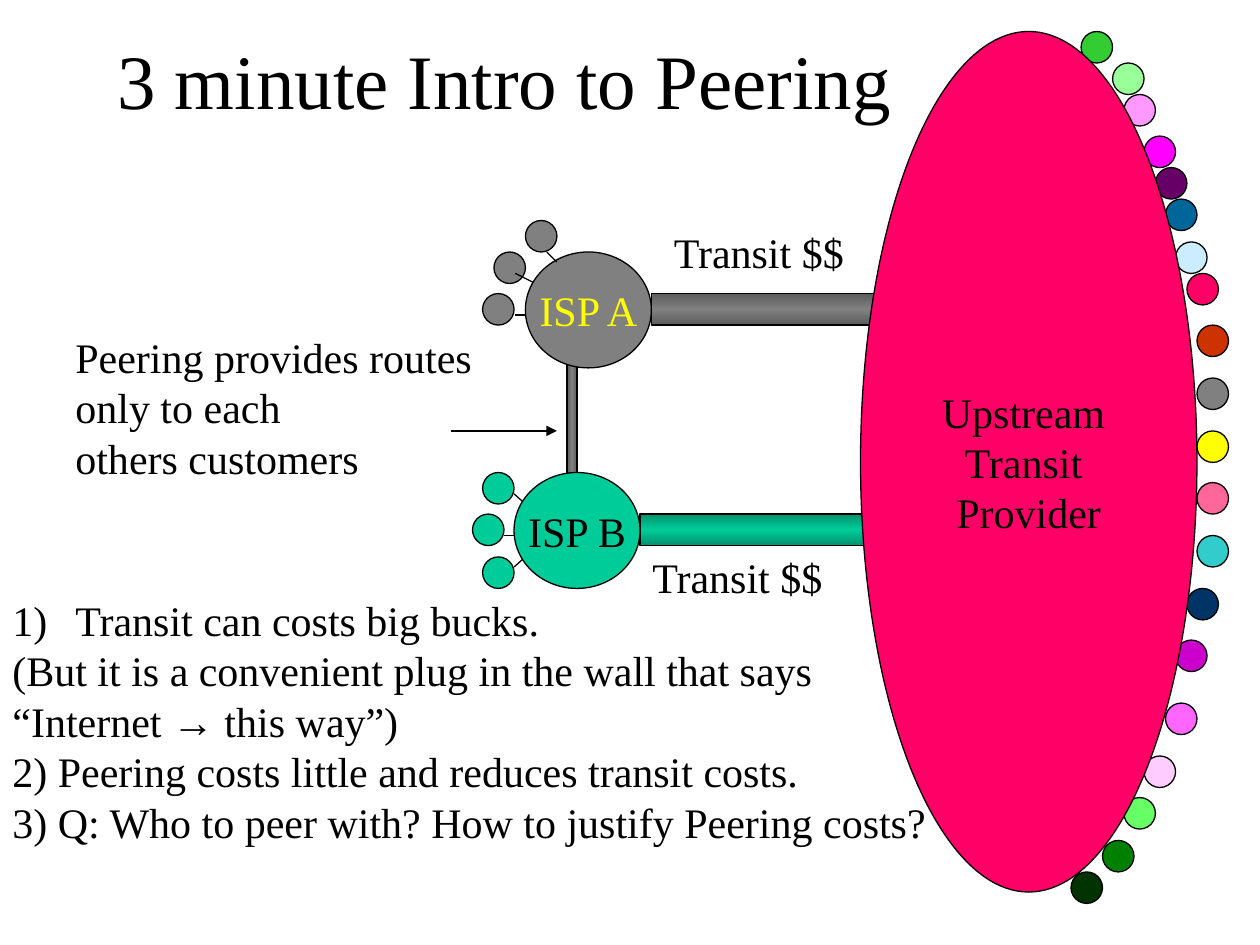
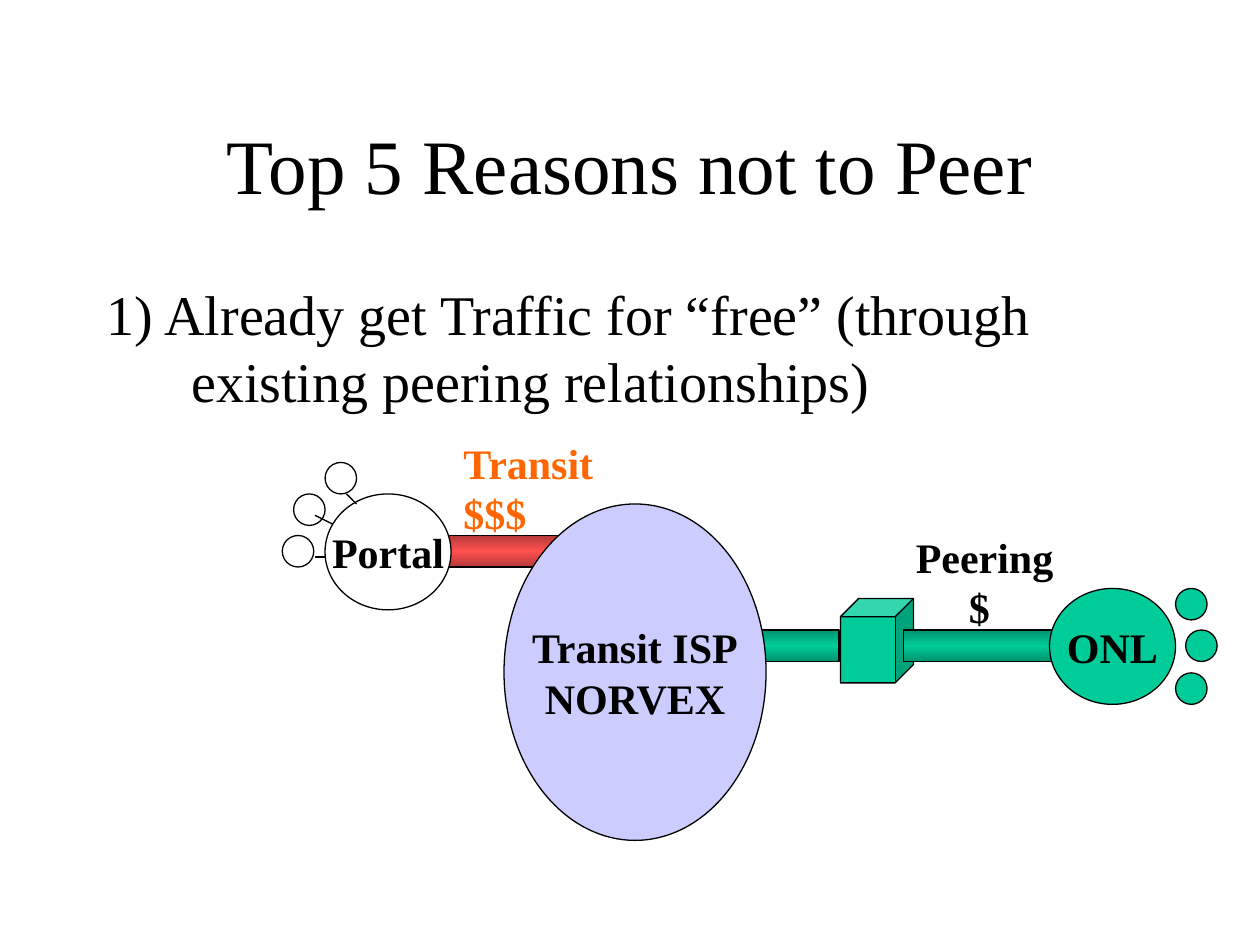
from dataclasses import dataclass

from lxml import etree
from pptx import Presentation
from pptx.dml.color import RGBColor
from pptx.enum.shapes import MSO_CONNECTOR as CONN, MSO_SHAPE as SHAPE
from pptx.enum.text import MSO_ANCHOR as ANCHOR, MSO_AUTO_SIZE as AUTO, PP_ALIGN as ALIGN
from pptx.oxml import parse_xml
from pptx.oxml.ns import nsdecls, qn
from pptx.util import Inches, Pt

FONT = "Times New Roman"
BLACK, WHITE, GRAY, GREEN = "000000", "FFFFFF", "808080", "00CC99"
PINK, YELLOW, ORANGE, LAVENDER = "FF0066", "FFFF00", "FF6600", "CCCCFF"
# Pipe gradients: edge colour, middle colour
GRAY_PIPE, GREEN_PIPE, RED_PIPE = ("5C5C5C", GRAY), ("00926D", GREEN), ("B63939", "FF5050")
DOT = 0.25
NODE_W, NODE_H = 1, 0.92


@dataclass(frozen=True)
class Style:
    size: int = 24
    color: str = BLACK
    bold: bool = False
    align: ALIGN = ALIGN.LEFT


@dataclass(frozen=True)
class Para:
    text: str
    left: float = 0
    first: float = 0
    numbered: bool = False
    before: int = 0


@dataclass(frozen=True)
class Fan:
    """Customer dots and links, as offsets from the node's corner."""
    dots: tuple
    links: tuple = ()
    front_links: tuple = ()


@dataclass(frozen=True)
class Node:
    name: str
    x: float
    y: float
    fill: str
    fan: Fan
    style: Style


FAN_ABOVE = Fan(
    dots=((0, -0.25), (-0.25, 0), (-0.34, 0.33)),
    links=((-0.08, 0.17, 0.08, 0.25), (-0.08, 0.5, 0.08, 0.5)),
    front_links=((0.17, 0, 0.25, 0.08),),
)
FAN_LEFT = Fan(
    dots=((-0.25, 0), (-0.33, 0.33), (-0.25, 0.67)),
    links=((0, 0.17, 0.09, 0.25), (-0.08, 0.5, 0, 0.5), (0, 0.75, 0.09, 0.67)),
)
FAN_RIGHT = Fan(dots=tuple((NODE_W - DOT - dx, dy) for dx, dy in FAN_LEFT.dots))

TITLE = Style(44, align=ALIGN.CENTER)
BODY = Style(32)
LABEL = Style()
CENTER = Style(align=ALIGN.CENTER)
BOLD = Style(bold=True)
BOLD_CENTER = Style(bold=True, align=ALIGN.CENTER)

# Customers around the upstream provider: x, y, colour
UPSTREAM_DOTS = (
    (8.5, 6.92, "003300"), (8.58, 0.25, "33CC33"), (8.83, 0.5, "99FF99"),
    (8.92, 0.75, "FF99FF"), (9.08, 1.08, "FF00FF"), (9.17, 1.33, "660066"),
    (9.25, 1.58, "006699"), (9.33, 1.92, "CCECFF"), (9.42, 2.17, PINK),
    (9.5, 2.58, "CC3300"), (9.5, 3, GRAY), (9.5, 3.42, YELLOW),
    (9.5, 3.83, "FF6699"), (9.5, 4.25, "33CCCC"), (9.42, 4.67, "003366"),
    (9.33, 5.08, "CC00CC"), (9.25, 5.58, "FF66FF"), (9.08, 6, "FFCCFF"),
    (8.92, 6.33, "66FF66"), (8.75, 6.67, "008000"),
)


def rgb(value: str) -> RGBColor:
    return RGBColor.from_string(value)


def write(tf, paras, style: Style) -> None:
    """Fill a text frame; plain strings become unindented paragraphs."""
    for i, para in enumerate(paras):
        if isinstance(para, str):
            para = Para(para)
        p = tf.paragraphs[0] if i == 0 else tf.add_paragraph()
        p.alignment = style.align
        if para.before:
            p.space_before = Pt(para.before)
        pPr = p._p.get_or_add_pPr()
        pPr.set("marL", str(Inches(para.left)))
        pPr.set("indent", str(Inches(para.first)))
        if para.numbered:
            etree.SubElement(pPr, qn("a:buAutoNum")).set("type", "arabicParenR")
        r = p.add_run()
        r.text = para.text
        r.font.name, r.font.size, r.font.bold = FONT, Pt(style.size), style.bold
        r.font.color.rgb = rgb(style.color)


def add_text(s, x: float, y: float, w: float, h: float, paras, style: Style = LABEL,
             wrap: bool = False, anchor: ANCHOR = ANCHOR.TOP) -> None:
    tf = s.shapes.add_textbox(Inches(x), Inches(y), Inches(w), Inches(h)).text_frame
    tf.word_wrap = wrap
    tf.auto_size = AUTO.NONE if wrap else AUTO.SHAPE_TO_FIT_TEXT
    tf.vertical_anchor = anchor
    write(tf, paras, style)


def add_title(s, x: float, y: float, w: float, text: str) -> None:
    add_text(s, x, y, w, 1.25, [text], TITLE, wrap=True, anchor=ANCHOR.MIDDLE)


def add_figure(s, kind: SHAPE, x: float, y: float, w: float, h: float, fill: str,
               paras=(), style: Style = CENTER):
    sp = s.shapes.add_shape(kind, Inches(x), Inches(y), Inches(w), Inches(h))
    sp.shadow.inherit = False
    sp.fill.solid()
    sp.fill.fore_color.rgb = rgb(fill)
    sp.line.color.rgb = rgb(BLACK)
    sp.line.width = Pt(0.75)
    if paras:
        sp.text_frame.word_wrap = False
        sp.text_frame.vertical_anchor = ANCHOR.MIDDLE
        write(sp.text_frame, paras, style)
    return sp


def add_dot(s, x: float, y: float, fill: str) -> None:
    add_figure(s, SHAPE.OVAL, x, y, DOT, DOT, fill)


def add_pipe(s, x: float, y: float, w: float, h: float, colors) -> None:
    """Rectangle shaded across its short side, lightest in the middle."""
    edge, middle = colors
    sp = add_figure(s, SHAPE.RECTANGLE, x, y, w, h, middle)
    stops = "".join(
        f'<a:gs pos="{pos}"><a:srgbClr val="{color}"/></a:gs>'
        for pos, color in ((0, edge), (50000, middle), (100000, edge)))
    angle = 5400000 if w > h else 0
    grad = parse_xml(f'<a:gradFill {nsdecls("a")} rotWithShape="1"><a:gsLst>{stops}</a:gsLst>'
                     f'<a:lin ang="{angle}" scaled="1"/></a:gradFill>')
    spPr = sp._element.spPr
    spPr.replace(spPr.find(qn("a:solidFill")), grad)


def add_line(s, x1: float, y1: float, x2: float, y2: float, arrow: bool = False) -> None:
    cn = s.shapes.add_connector(CONN.STRAIGHT, Inches(x1), Inches(y1), Inches(x2), Inches(y2))
    cn.line.color.rgb = rgb(BLACK)
    cn.line.width = Pt(0.75)
    if arrow:
        etree.SubElement(cn.line._get_or_add_ln(), qn("a:tailEnd")).set("type", "triangle")
    etree.SubElement(cn._element.spPr, qn("a:effectLst"))


def add_node(s, node: Node) -> None:
    """A provider circle with its fan of customers."""
    def draw_links(links) -> None:
        for x1, y1, x2, y2 in links:
            add_line(s, node.x + x1, node.y + y1, node.x + x2, node.y + y2)

    for dx, dy in node.fan.dots:
        add_dot(s, node.x + dx, node.y + dy, node.fill)
    draw_links(node.fan.links)
    add_figure(s, SHAPE.OVAL, node.x, node.y, NODE_W, NODE_H, node.fill, [node.name], node.style)
    draw_links(node.fan.front_links)


def build_intro(s) -> None:
    add_title(s, 0.17, 0, 7.67, "3 minute Intro to Peering")

    # Peering and transit pipes
    add_pipe(s, 4.5, 2.83, 0.08, 1.08, GRAY_PIPE)
    add_pipe(s, 5.17, 2.33, 2.67, 0.25, GRAY_PIPE)
    add_pipe(s, 5.08, 4.08, 2.67, 0.25, GREEN_PIPE)
    add_line(s, 3.58, 3.42, 4.42, 3.42, arrow=True)
    for x, y in ((5.25, 1.75), (5.08, 4.33)):
        add_text(s, x, y, 1.56, 0.5, ["Transit $$"])

    # Providers
    add_node(s, Node("ISP A", 4.17, 2, GRAY, FAN_ABOVE, Style(color=YELLOW, align=ALIGN.CENTER)))
    add_node(s, Node("ISP B", 4.08, 3.75, GREEN, FAN_LEFT, CENTER))
    add_text(s, 0.5, 2.58, 3.43, 1.3,
             ["Peering provides routes", "only to each", "others customers"])
    for dot in UPSTREAM_DOTS:
        add_dot(s, *dot)

    # Conclusions
    lines = ("Transit can costs big bucks.",
             "(But it is a convenient plug in the wall that says",
             "“Internet → this way”)",
             "2) Peering costs little and reduces transit costs.",
             "3) Q: Who to peer with? How to justify Peering costs?")
    add_text(s, 0, 4.67, 7.45, 2.1,
             [Para(text, 0.5, -0.5, numbered=i == 0) for i, text in enumerate(lines)])
    add_figure(s, SHAPE.OVAL, 6.83, 0.25, 2.67, 6.83, PINK,
               ["Upstream ", "Transit ", "Provider"])


def build_reasons(s) -> None:
    # Peering path
    add_pipe(s, 5.33, 5, 1.33, 0.25, GREEN_PIPE)
    add_figure(s, SHAPE.CUBE, 6.67, 4.75, 0.58, 0.67, GREEN)
    add_pipe(s, 7.17, 5, 1.33, 0.25, GREEN_PIPE)

    add_title(s, 0.75, 0.67, 8.5, "Top 5 Reasons not to Peer")
    reason = "1) Already get Traffic for “free” (through existing peering relationships)"
    add_text(s, 0.75, 2.17, 8.5, 4.5, [Para(reason, 0.67, -0.67, before=6)], BODY, wrap=True)

    # Transit path
    add_pipe(s, 3.42, 4.25, 1.5, 0.25, RED_PIPE)
    add_text(s, 3.58, 3.42, 1.26, 0.9, ["Transit", "$$$"], Style(color=ORANGE, bold=True))
    add_node(s, Node("Portal", 2.58, 3.92, WHITE, FAN_ABOVE, BOLD_CENTER))
    add_figure(s, SHAPE.OVAL, 4, 4, 2.08, 2.67, LAVENDER,
               ["Transit ISP", "NORVEX"], BOLD_CENTER)

    # Peering partner
    add_text(s, 7.17, 4.17, 1.29, 0.9, ["Peering", Para("$", 0.42)], BOLD)
    add_node(s, Node("ONL", 8.33, 4.67, GREEN, FAN_RIGHT, BOLD_CENTER))


def main() -> None:
    prs = Presentation()
    prs.slide_width, prs.slide_height = Inches(10), Inches(7.5)
    for build in (build_intro, build_reasons):
        build(prs.slides.add_slide(prs.slide_layouts[6]))
    prs.save("out.pptx")


if __name__ == "__main__":
    main()
